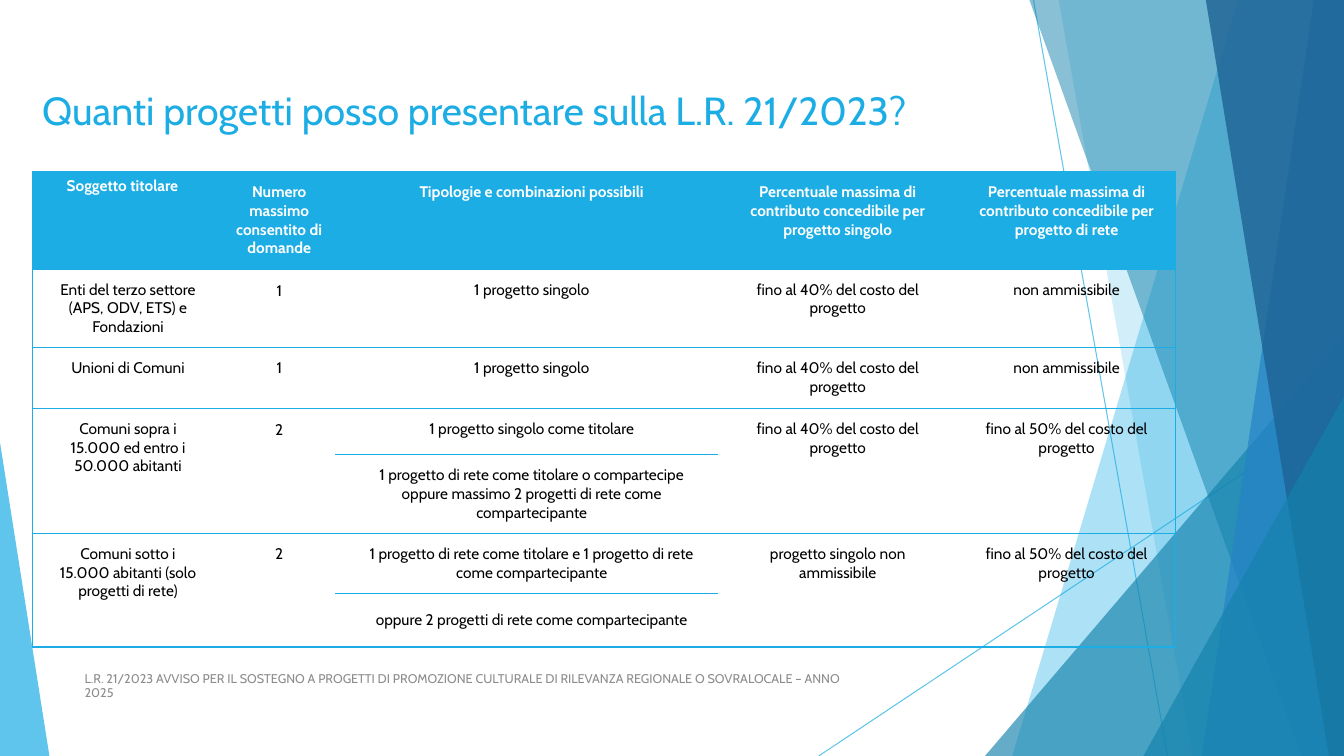
from lxml import etree
from pptx import Presentation
from pptx.dml.color import RGBColor
from pptx.enum.shapes import MSO_CONNECTOR, MSO_SHAPE
from pptx.enum.text import MSO_ANCHOR, PP_ALIGN
from pptx.oxml.ns import qn
from pptx.util import Inches, Pt

STRAIGHT = MSO_CONNECTOR.STRAIGHT
TRIANGLE = MSO_SHAPE.ISOSCELES_TRIANGLE
TOP, MIDDLE = MSO_ANCHOR.TOP, MSO_ANCHOR.MIDDLE
CENTER = PP_ALIGN.CENTER

W, H = 13.33, 7.5
FONT = "Cabin"
COLORS = {
    "sky": "1CADE4",
    "teal": "1482AC",
    "blue": "2683C6",
    "navy": "1D6294",
    "grey": "8C8C8C",
    "white": "FFFFFF",
    "black": "000000",
}

COL_WIDTHS = [1.79, 1.21, 3.8, 2.27, 2.27]
ROW_HEIGHTS = [0.97, 0.78, 0.6, 0.46, 0.78, 0.6, 0.53]
MERGED_STARTS = (3, 5)
COMBINATIONS_COL = 2
ROWS = [
    ["Soggetto titolare", "Numero massimo consentito di domande",
     "Tipologie e combinazioni possibili",
     "Percentuale massima di contributo concedibile per progetto singolo",
     "Percentuale massima di contributo concedibile per progetto di rete"],
    ["Enti del terzo settore (APS, ODV, ETS) e Fondazioni", "1", "1 progetto singolo",
     "fino al 40% del costo del progetto", "non ammissibile"],
    ["Unioni di Comuni", "1", "1 progetto singolo",
     "fino al 40% del costo del progetto", "non ammissibile"],
    ["Comuni sopra i 15.000 ed entro i 50.000 abitanti", "2",
     "1 progetto singolo come titolare",
     "fino al 40% del costo del progetto", "fino al 50% del costo del progetto"],
    [None, None,
     "1 progetto di rete come titolare o compartecipe oppure massimo 2 progetti "
     "di rete come compartecipante", None, None],
    ["Comuni sotto i 15.000 abitanti (solo progetti di rete)", "2",
     "1 progetto di rete come titolare e 1 progetto di rete come compartecipante",
     "progetto singolo non ammissibile", "fino al 50% del costo del progetto"],
    [None, None, "oppure 2 progetti di rete come compartecipante", None, None],
]


def rgb(name):
    return RGBColor.from_string(COLORS[name])


def set_alpha(fill_parent, percent):
    color = fill_parent.find(".//" + qn("a:srgbClr"))
    etree.SubElement(color, qn("a:alpha"), val=str(percent * 1000))


def paint(sp, color, alpha):
    sp.shadow.inherit = False
    sp.fill.solid()
    sp.fill.fore_color.rgb = rgb(color)
    set_alpha(sp._element.spPr, alpha)
    sp.line.fill.background()


def add_ray(s, x1, y1, x2, y2):
    line = s.shapes.add_connector(STRAIGHT, *map(Inches, (x1, y1, x2, y2)))
    line.line.color.rgb = rgb("sky")
    line.line.width = Pt(0.75)
    set_alpha(line._element.spPr, 70)
    etree.SubElement(line._element.spPr, qn("a:effectLst"))


def add_band(s, top_x, bottom_x, color, alpha):
    points = [(top_x, 0), (W, 0), (W, H), (bottom_x, H)]
    points = [(Inches(x), Inches(y)) for x, y in points]
    builder = s.shapes.build_freeform(*points[0])
    builder.add_line_segments(points[1:], close=True)
    paint(builder.convert_to_shape(), color, alpha)


def add_corner(s, x, y, w, peak, color, alpha):
    sp = s.shapes.add_shape(TRIANGLE, *map(Inches, (x, y, w, H - y)))
    sp.adjustments[0] = peak
    paint(sp, color, alpha)


def add_backdrop(s):
    add_ray(s, 10.25, 0, 11.58, H)
    add_ray(s, W, 4.03, 8.12, H)
    add_band(s, 12.28, 10.04, "sky", 36)
    add_band(s, 10.5, 11.83, "sky", 20)
    add_corner(s, 9.77, 3.33, 3.56, 1, "teal", 66)
    add_band(s, 10.21, 12.91, "teal", 50)
    add_band(s, 13.03, 11.92, "blue", 70)
    add_band(s, 11.96, 13.18, "navy", 80)
    add_corner(s, 11.34, 3.93, 1.99, 1, "teal", 66)
    add_corner(s, 0, 4.39, 0.49, 0, "sky", 70)


def add_run(p, text, size, color, bold=False):
    r = p.add_run()
    r.text = text
    r.font.name = FONT
    r.font.size = Pt(size)
    r.font.bold = bold
    r.font.color.rgb = rgb(color)


def add_text(s, box, text, size, color, anchor=TOP):
    tf = s.shapes.add_textbox(*map(Inches, box)).text_frame
    tf.word_wrap = True
    tf.vertical_anchor = anchor
    p = tf.paragraphs[0]
    add_run(p, text, size, color)
    return p


def set_borders(cell, sides):
    tcPr = cell._tc.get_or_add_tcPr()
    for i, side in enumerate("LRTB"):
        ln = etree.Element(qn("a:ln" + side), w=str(Pt(1)))
        if side in sides:
            fill = etree.SubElement(ln, qn("a:solidFill"))
            etree.SubElement(fill, qn("a:srgbClr"), val=COLORS["sky"])
        else:
            etree.SubElement(ln, qn("a:noFill"))
        tcPr.insert(i, ln)


def cell_sides(row, col):
    sides = {"T", "B"}
    if col == 0:
        sides.add("L")
    if col == len(COL_WIDTHS) - 1:
        sides.add("R")
    if col != COMBINATIONS_COL:
        if row in MERGED_STARTS:
            sides.remove("B")
        if row - 1 in MERGED_STARTS:
            sides.remove("T")
    return sides


def fill_cell(cell, row, col, text):
    header = row == 0
    if header:
        cell.fill.solid()
        cell.fill.fore_color.rgb = rgb("sky")
    else:
        cell.fill.background()
    set_borders(cell, cell_sides(row, col))
    if text is None:
        return
    if (row, col) != (0, 0):
        cell.margin_left = Inches(0.22)
        cell.margin_right = cell.margin_top = cell.margin_bottom = Inches(0.11)
    cell.vertical_anchor = MIDDLE if row == len(ROWS) - 1 else TOP
    p = cell.text_frame.paragraphs[0]
    p.alignment = CENTER
    p.space_after = Pt(8)
    if col == 1 and row in (1, 3):
        p.line_spacing = 1.07
    add_run(p, text, 11, "white" if header else "black", header)


def add_rules_table(s, x, y):
    box = (x, y, sum(COL_WIDTHS), sum(ROW_HEIGHTS))
    table = s.shapes.add_table(len(ROWS), len(COL_WIDTHS), *map(Inches, box)).table
    table.horz_banding = False
    for column, width in zip(table.columns, COL_WIDTHS):
        column.width = Inches(width)
    for row, height in zip(table.rows, ROW_HEIGHTS):
        row.height = Inches(height)
    for start in MERGED_STARTS:
        for col in range(len(COL_WIDTHS)):
            if col != COMBINATIONS_COL:
                table.cell(start, col).merge(table.cell(start + 1, col))
    for i, texts in enumerate(ROWS):
        for j, text in enumerate(texts):
            fill_cell(table.cell(i, j), i, j, text)
    for start in MERGED_STARTS:
        for col in range(len(COL_WIDTHS)):
            if col != COMBINATIONS_COL:
                ln = table.cell(start, col)._tc.tcPr.find(qn("a:lnB"))
                ln.remove(ln[0])
                fill = etree.SubElement(ln, qn("a:solidFill"))
                etree.SubElement(fill, qn("a:srgbClr"), val=COLORS["sky"])


def main():
    prs = Presentation()
    prs.slide_width, prs.slide_height = Inches(W), Inches(H)
    s = prs.slides.add_slide(prs.slide_layouts[6])
    add_backdrop(s)
    title = add_text(s, (0.32, 0.81, 9.39, 0.72),
                     "Quanti progetti posso presentare sulla L.R. 21/2023?", 28, "sky")
    title.space_before = Pt(10)
    footer = add_text(s, (0.74, 6.61, 7.98, 0.4),
                      "L.R. 21/2023 AVVISO PER IL SOSTEGNO A PROGETTI DI PROMOZIONE CULTURALE "
                      "DI RILEVANZA REGIONALE O SOVRALOCALE – ANNO 2025", 9, "grey", MIDDLE)
    footer.line_spacing = 0.9
    footer.space_after = Pt(6)
    add_rules_table(s, 0.32, 1.7)
    prs.save("out.pptx")


if __name__ == "__main__":
    main()
